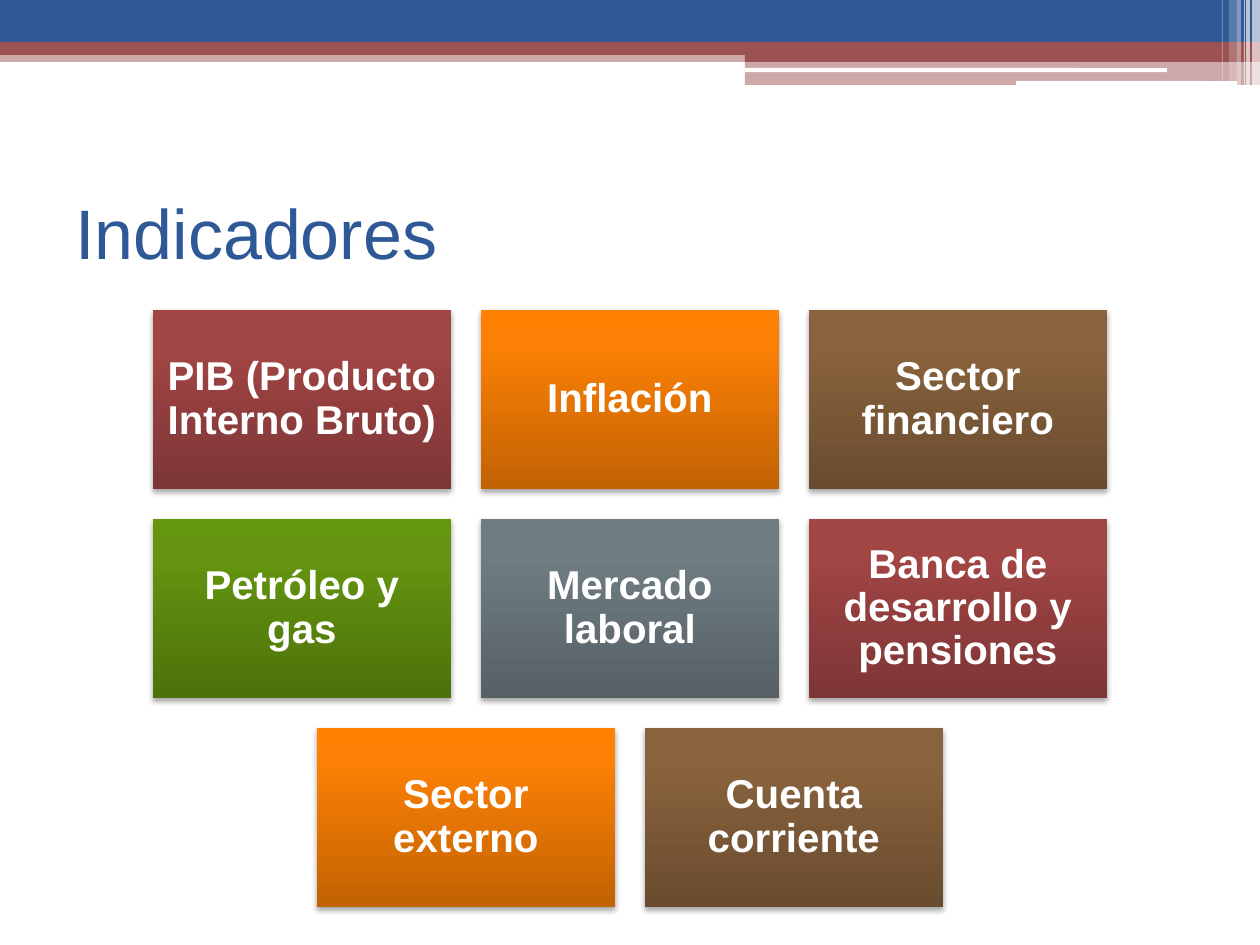
import copy
import pptx
import pptx.util
import pptx.dml.color
import pptx.enum.shapes
import pptx.enum.text
import pptx.oxml
import pptx.oxml.ns

PX = 914400 / 126
RECT = pptx.enum.shapes.MSO_SHAPE.RECTANGLE
ROUNDED = pptx.enum.shapes.MSO_SHAPE.ROUNDED_RECTANGLE
NS = pptx.oxml.ns.nsdecls("a")


def rgb(value):
    return pptx.dml.color.RGBColor.from_string(value)


def px(*lengths):
    return [pptx.util.Emu(round(length * PX)) for length in lengths]


deck = pptx.Presentation()
deck.slide_width, deck.slide_height = px(1260, 945)
slide = deck.slides.add_slide(deck.slide_layouts[6])

bands = [
    (RECT, 0, 50, 1260, 12, "9C5252", 50),
    (RECT, 0, 0, 1260, 42, "2F5897", 100),
    (RECT, 0, 42, 1260, 13, "9C5252", 100),
    (RECT, 745, 49, 515, 13, "9C5252", 100),
    (RECT, 745, 62, 515, 23, "9C5252", 50),
    (ROUNDED, 745, 68, 422, 4, "FFFFFF", 100),
    (ROUNDED, 1016, 81, 221, 5, "FFFFFF", 100),
    (RECT, 1252, 0, 8, 86, "FFFFFF", 65),
    (RECT, 1246, 0, 4, 86, "FFFFFF", 65),
    (RECT, 1244, 0, 1, 86, "FFFFFF", 60),
    (RECT, 1237, 0, 4, 86, "FFFFFF", 40),
    (RECT, 1229, 0, 8, 81, "FFFFFF", 20),
    (RECT, 1222, 0, 1, 81, "FFFFFF", 30),
]
for outline, left, top, width, height, color, opacity in bands:
    band = slide.shapes.add_shape(outline, *px(left, top, width, height))
    band.shadow.inherit = False
    band.fill.solid()
    band.fill.fore_color.rgb = rgb(color)
    band.line.fill.background()
    if opacity < 100:
        tint = band._element.spPr.find(".//" + pptx.oxml.ns.qn("a:srgbClr"))
        tint.append(pptx.oxml.parse_xml(f'<a:alpha {NS} val="{opacity * 1000}"/>'))

title = slide.shapes.add_textbox(*px(63, 158, 1134, 147))
title.text_frame.word_wrap = True
title.text_frame.vertical_anchor = pptx.enum.text.MSO_ANCHOR.MIDDLE
heading = title.text_frame.paragraphs[0].add_run()
heading.text = "Indicadores"
heading.font.name = "Arial"
heading.font.size = pptx.util.Pt(40)
heading.font.color.rgb = rgb("2F5897")

RED = ("7D3535", "A24545", "A44343")
ORANGE = ("C26203", "FB8004", "FF8002")
BROWN = ("694C2F", "89633D", "8B633C")
GREEN = ("4D720B", "64940F", "65970C")
GRAY = ("566065", "6F7D83", "6F7E84")
CARD_WIDTH, CARD_HEIGHT, GAP = 298, 179, 30
SHADOW = (
    f'<a:outerShdw {NS} blurRad="39400" dist="22900" dir="5400000" rotWithShape="0">'
    '<a:srgbClr val="000000"><a:alpha val="35000"/></a:srgbClr></a:outerShdw>'
)

indicator_rows = [
    [("PIB (Producto Interno Bruto)", RED), ("Inflación", ORANGE), ("Sector financiero", BROWN)],
    [("Petróleo y gas", GREEN), ("Mercado laboral", GRAY), ("Banca de desarrollo y pensiones", RED)],
    [("Sector externo", ORANGE), ("Cuenta corriente", BROWN)],
]
for row, indicators in enumerate(indicator_rows):
    row_width = len(indicators) * (CARD_WIDTH + GAP) - GAP
    row_left = (1260 - row_width) // 2
    for column, (label, colors) in enumerate(indicators):
        left = row_left + column * (CARD_WIDTH + GAP)
        top = 310 + row * (CARD_HEIGHT + GAP)
        card = slide.shapes.add_shape(RECT, *px(left, top, CARD_WIDTH, CARD_HEIGHT))
        card.line.fill.background()
        card.fill.gradient()
        card.fill.gradient_angle = 90
        stops = card._element.spPr.find(".//" + pptx.oxml.ns.qn("a:gsLst"))
        stops.insert(1, copy.deepcopy(stops[0]))
        for stop, color, position in zip(card.fill.gradient_stops, colors, (0, 0.8, 1)):
            stop.color.rgb = rgb(color)
            stop.position = position
        card.shadow.inherit = False
        effects = card._element.spPr.find(pptx.oxml.ns.qn("a:effectLst"))
        effects.append(pptx.oxml.parse_xml(SHADOW))

        frame = card.text_frame
        frame.word_wrap = True
        frame.vertical_anchor = pptx.enum.text.MSO_ANCHOR.MIDDLE
        inset = pptx.util.Inches(0.1)
        frame.margin_left = frame.margin_right = inset
        frame.margin_top = frame.margin_bottom = inset
        paragraph = frame.paragraphs[0]
        paragraph.alignment = pptx.enum.text.PP_ALIGN.CENTER
        paragraph.line_spacing = 0.9
        name = paragraph.add_run()
        name.text = label
        name.font.name = "Arial"
        name.font.size = pptx.util.Pt(23)
        name.font.bold = True
        name.font.color.rgb = rgb("FFFFFF")

deck.save("out.pptx")
